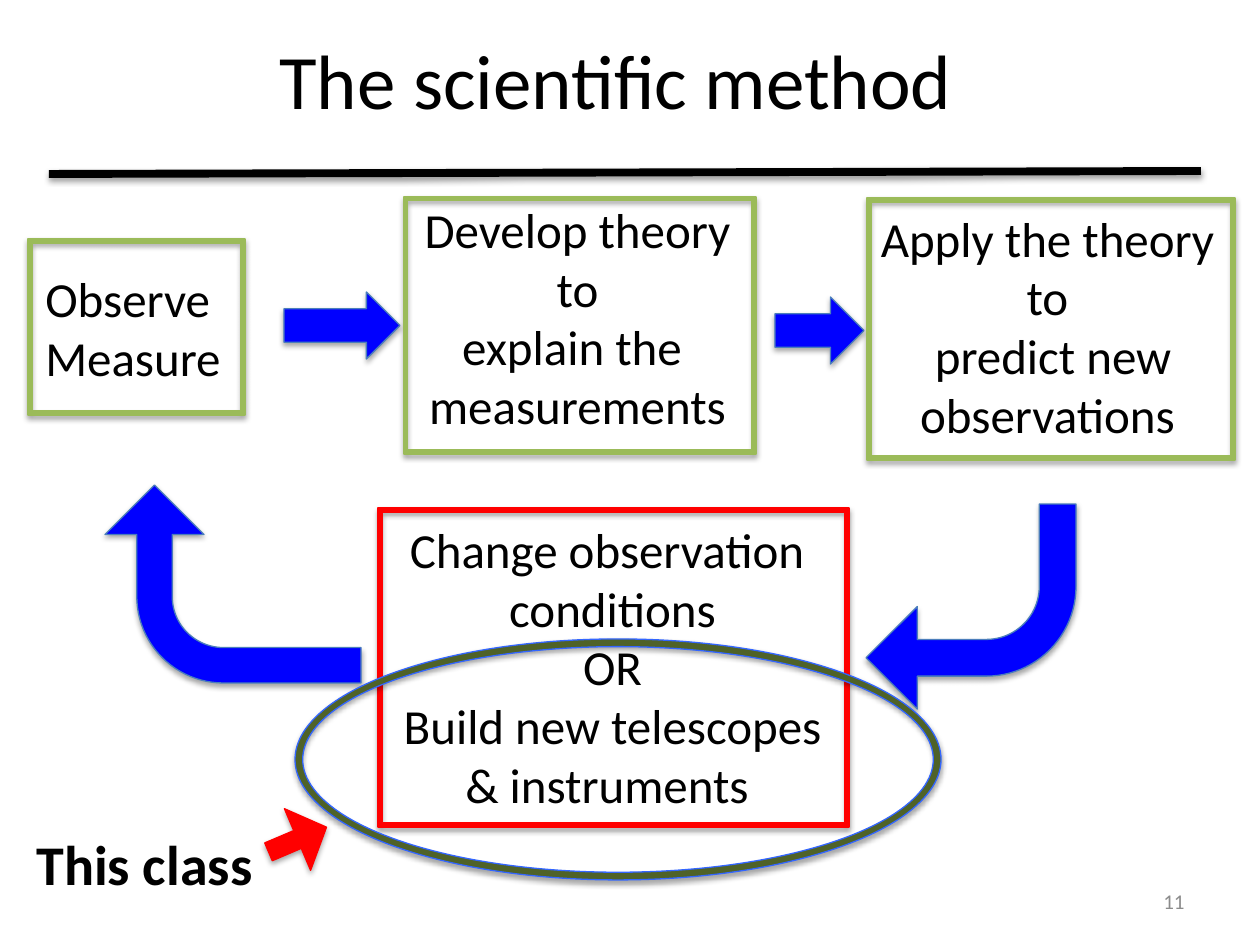
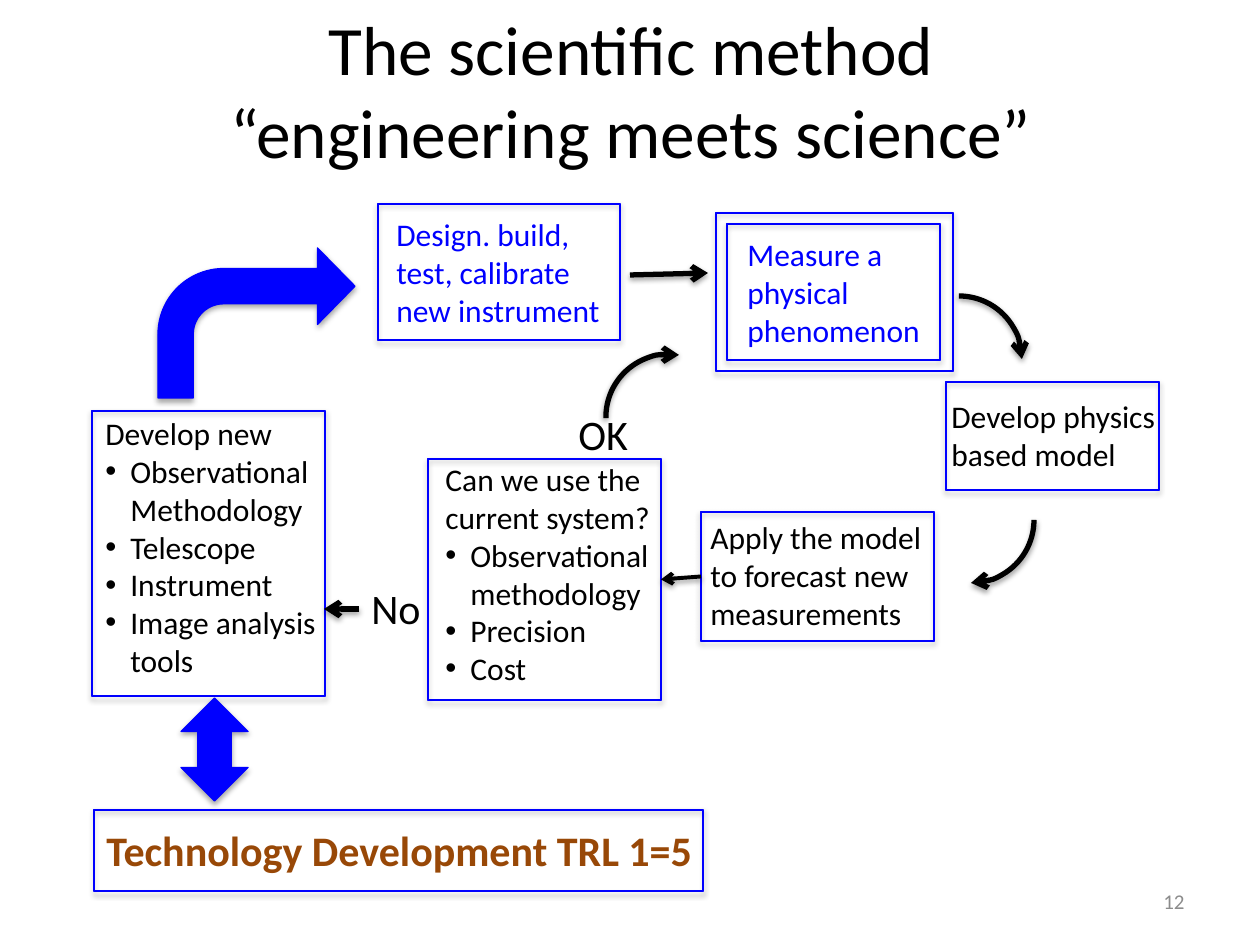
from lxml import etree
from pptx import Presentation
from pptx import util as u
from pptx.dml.color import RGBColor
from pptx.enum import shapes, text
from pptx.oxml import ns

PX = 914400 / 126
FONT = "Calibri"
BLACK = RGBColor(0x00, 0x00, 0x00)
GREY = RGBColor(0x8C, 0x8C, 0x8C)
BLUE = RGBColor(0x00, 0x00, 0xFF)
STEEL = RGBColor(0x4B, 0x7E, 0xBC)
GREEN = RGBColor(0x9B, 0xBB, 0x59)
RED = RGBColor(0xFF, 0x00, 0x00)
OLIVE = RGBColor(0x4F, 0x62, 0x28)
OUTLINE = RGBColor(0x33, 0x66, 0xFF)
BROWN = RGBColor(0x98, 0x48, 0x07)
GRADIENT = (RGBColor(0x3F, 0x80, 0xCE), RGBColor(0xA4, 0xC4, 0xFF))

S = shapes.MSO_SHAPE
LEFT, CENTER, RIGHT = text.PP_ALIGN.LEFT, text.PP_ALIGN.CENTER, text.PP_ALIGN.RIGHT
HANG = 25
BULLET, CONTINUED = "•", ">"

METHOD_STEPS = [
    ((33, 262, 203, 131), LEFT, ["Observe", "Measure"]),
    ((410, 193, 335, 251), CENTER,
     ["Develop theory", " to ", "explain the ", "measurements"]),
    ((866, 202, 363, 251), CENTER,
     ["Apply the theory ", "to", " predict new", " observations "]),
    ((389, 513, 447, 310), CENTER,
     ["Change observation ", "conditions", "OR", "Build new telescopes ", "& instruments "]),
]
METHOD_ARROWS = [
    (S.RIGHT_ARROW, (775, 297, 89, 67), 0, ()),
    (S.BENT_ARROW, (134, 456, 198, 256), 270, (0.179, 0.25, 0.25, 0.438)),
    (S.RIGHT_ARROW, (284, 292, 116, 67), 0, ()),
    (S.BENT_ARROW, (866, 504, 210, 205), 180, (0.179, 0.25, 0.25, 0.438)),
]
METHOD_FRAMES = [
    ((28, 239, 217, 176), 0.026, GREEN),
    ((404, 197, 352, 257), 0.015, GREEN),
    ((867, 198, 368, 262), 0.016, GREEN),
    ((378, 508, 471, 319), 0.014, RED),
]

LOOP_STEPS = [
    ((939, 391, 231, 89), 18, BLACK, ["Develop physics", "based model"]),
    ((698, 512, 238, 127), 18, BLACK,
     ["Apply the model", "to forecast new", "measurements"]),
    ((433, 454, 232, 280), 18, BLACK,
     ["Can we use the", "current system?", (BULLET, "Observational"),
      (CONTINUED, "methodology"), (BULLET, "Precision"), (BULLET, "Cost")]),
    ((566, 402, 76, 63), 24, BLACK, ["OK"]),
    ((359, 576, 76, 63), 24, BLACK, ["No"]),
    ((735, 229, 199, 127), 18, BLUE, ["Measure a", "physical", "phenomenon"]),
    ((93, 408, 237, 280), 18, BLACK,
     ["Develop new", (BULLET, "Observational"), (CONTINUED, "Methodology"),
      (BULLET, "Telescope"), (BULLET, "Instrument"),
      (BULLET, "Image analysis"), (CONTINUED, "tools")]),
]
LOOP_FRAMES = {
    "measure": (727, 224, 213, 136),
    "model": (946, 382, 213, 108),
    "forecast": (701, 512, 233, 129),
    "question": (428, 459, 233, 241),
    "develop": (92, 411, 233, 285),
    "technology": (94, 810, 609, 81),
    "design": (378, 204, 242, 136),
    "measure outer": (716, 213, 237, 158),
}
LOOP_ARCS = [
    ((896, 296, 126, 126), 0, ()),
    ((908, 457, 126, 126), 90, ()),
    ((606, 354, 126, 126), 279.2, (155.925, 0)),
]
LOOP_ARROWS = [
    (S.BENT_ARROW, (158, 248, 197, 150), (0.235, 0.255, 0.25, 0.438)),
    (S.UP_DOWN_ARROW, (181, 698, 67, 103), ()),
]
LOOP_LINKS = [(359, 609, 324, 609), (630, 275, 708, 273)]


def px(*lengths):
    return [u.Emu(round(length * PX)) for length in lengths]


def add_shadow(part, distance, alpha):
    effects = etree.SubElement(part.element.spPr, ns.qn("a:effectLst"))
    outer = etree.SubElement(effects, ns.qn("a:outerShdw"), blurRad="40000",
                             dist=str(distance), dir="5400000", rotWithShape="0")
    colour = etree.SubElement(outer, ns.qn("a:srgbClr"), val=str(BLACK))
    etree.SubElement(colour, ns.qn("a:alpha"), val=str(alpha))


def style_stroke(part, width, arrow):
    part.line.color.rgb = BLACK
    part.line.width = u.Pt(width)
    if arrow:
        ln = part.element.spPr.find(ns.qn("a:ln"))
        etree.SubElement(ln, ns.qn("a:tailEnd"), type="arrow")
    add_shadow(part, 20000, 38000)


def add_text(slide, place, lines, size, colour=BLACK, align=LEFT, bold=False,
             wrap=False, fixed=False):
    box = slide.shapes.add_textbox(*px(*place))
    frame = box.text_frame
    frame.word_wrap = wrap
    if fixed:
        frame.auto_size = text.MSO_AUTO_SIZE.NONE
        frame.vertical_anchor = text.MSO_ANCHOR.MIDDLE
    else:
        frame.auto_size = text.MSO_AUTO_SIZE.SHAPE_TO_FIT_TEXT
    for index, line in enumerate(lines):
        mark, words = line if isinstance(line, tuple) else (None, line)
        paragraph = frame.paragraphs[0] if index == 0 else frame.add_paragraph()
        paragraph.text = words
        paragraph.alignment = align
        if mark:
            props = paragraph._p.get_or_add_pPr()
            hang = px(HANG)[0]
            props.set("marL", str(hang))
            props.set("indent", str(-hang if mark == BULLET else 0))
            if mark == BULLET:
                etree.SubElement(props, ns.qn("a:buFont"), typeface="Arial")
                etree.SubElement(props, ns.qn("a:buChar"), char=BULLET)
        for run in paragraph.runs:
            run.font.name = FONT
            run.font.size = u.Pt(size)
            run.font.bold = bold
            run.font.color.rgb = colour


def add_solid(slide, kind, place, fill, line, adjust=(), turn=0):
    part = slide.shapes.add_shape(kind, *px(*place))
    part.rotation = turn
    for index, value in enumerate(adjust):
        part.adjustments[index] = value
    if fill is GRADIENT:
        part.fill.gradient()
        part.fill.gradient_angle = 90
        for stop, colour in zip(part.fill.gradient_stops, GRADIENT):
            stop.color.rgb = colour
    else:
        part.fill.solid()
        part.fill.fore_color.rgb = fill
    part.line.color.rgb = line
    part.line.width = u.Pt(0.75)
    add_shadow(part, 23000, 35000)
    return part


def add_arc(slide, place, turn, adjust):
    arc = slide.shapes.add_shape(S.ARC, *px(*place))
    arc.rotation = turn
    for index, value in enumerate(adjust):
        arc.adjustments[index] = value
    arc.fill.background()
    style_stroke(arc, 3, True)


def add_line(slide, ends, width, arrow=True):
    line = slide.shapes.add_connector(shapes.MSO_CONNECTOR.STRAIGHT, *px(*ends))
    style_stroke(line, width, arrow)
    return line


def start_slide(deck, title, size, left, top, number):
    slide = deck.slides.add_slide(deck.slide_layouts[6])
    add_text(slide, (left, top, 1134, 158), [title], size, align=CENTER,
             wrap=True, fixed=True)
    add_text(slide, (903, 876, 294, 50), [number], 12, GREY, RIGHT,
             wrap=True, fixed=True)
    return slide


def build_method(deck):
    slide = start_slide(deck, "The scientific method", 44, 49, 0, "11")
    for place, align, lines in METHOD_STEPS:
        add_text(slide, place, lines, 28, align=align)
    for kind, place, turn, adjust in METHOD_ARROWS:
        add_solid(slide, kind, place, BLUE, STEEL, adjust, turn)
    add_line(slide, (1201, 171, 49, 174), 4.5, arrow=False)
    for place, border, colour in METHOD_FRAMES:
        add_solid(slide, S.FRAME, place, colour, colour, (border,))
    add_solid(slide, S.DONUT, (295, 639, 646, 241), OLIVE, OUTLINE, (0.032,))
    add_solid(slide, S.RIGHT_ARROW, (266, 806, 63, 67), RED, RED, (0.288, 0.5), 337)
    add_text(slide, (24, 823, 243, 81), ["This class"], 32, bold=True)


def build_loop(deck):
    slide = start_slide(deck, "The scientific method\v“engineering meets science”",
                        39.6, 64, 10, "12")
    for place, turn, adjust in LOOP_ARCS:
        add_arc(slide, place, turn, adjust)
    for place, size, colour, lines in LOOP_STEPS:
        add_text(slide, place, lines, size, colour)
    add_text(slide, (94, 818, 617, 63), ["Technology Development TRL 1=5"], 24,
             BROWN, bold=True)
    add_text(slide, (384, 209, 244, 127),
             ["Design. build,", "test, calibrate", "new instrument"], 18, BLUE, wrap=True)
    frames = {name: add_solid(slide, S.FRAME, place, GRADIENT, BLUE, (0,))
              for name, place in LOOP_FRAMES.items()}
    for kind, place, adjust in LOOP_ARROWS:
        add_solid(slide, kind, place, BLUE, BLUE, adjust)
    for ends in LOOP_LINKS:
        add_line(slide, ends, 3)
    forecast_link = add_line(slide, (701, 577, 661, 579), 2.25)
    forecast_link.begin_connect(frames["forecast"], 1)
    forecast_link.end_connect(frames["question"], 3)


def main():
    deck = Presentation()
    deck.slide_width, deck.slide_height = px(1260, 945)
    build_method(deck)
    build_loop(deck)
    deck.save("out.pptx")


if __name__ == "__main__":
    main()
